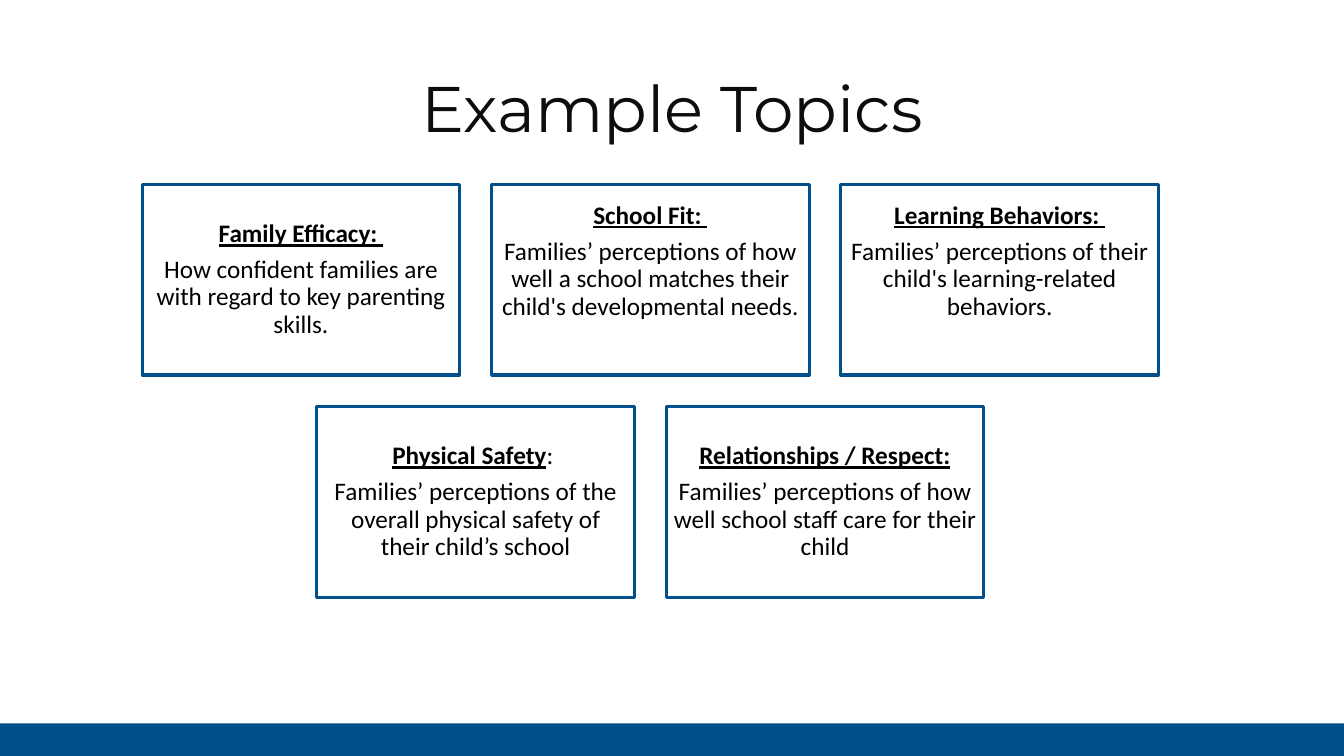
from dataclasses import dataclass

from pptx import Presentation
from pptx import util as u
from pptx.dml.color import RGBColor
from pptx.enum import shapes, text


@dataclass(frozen=True)
class Theme:
    accent: str = "00518B"
    paper: str = "FFFFFF"
    ink: str = "000000"
    title_ink: str = "0D0D0D"
    title_font: str = "Montserrat"
    body_font: str = "Calibri"
    title_size: float = 46
    body_size: float = 18
    border: float = 2.25
    paragraph_gap: float = 6.3
    inset: float = 0.07


class TopicSlide:
    """Draws a title, a centred grid of topic cards and a footer band."""

    left, top = 1.41, 1.83
    card_width, card_height = 3.15, 1.89
    gap = 0.1 * card_width
    columns = 3

    def __init__(self, deck, theme):
        self.theme = theme
        self.width, self.height = deck.slide_width, deck.slide_height
        self.slide = deck.slides.add_slide(deck.slide_layouts[5])

    def style_run(self, run, font, size, color, strong=False):
        run.font.name = font
        run.font.size = u.Pt(size)
        run.font.color.rgb = RGBColor.from_string(color)
        run.font.bold = run.font.underline = strong

    def title(self, wording):
        heading = self.slide.shapes.title
        heading.left, heading.top = u.Inches(1.57), u.Inches(0.62)
        heading.width, heading.height = u.Inches(10.19), u.Inches(0.88)
        heading.text_frame.text = wording
        heading.text_frame.auto_size = text.MSO_AUTO_SIZE.SHAPE_TO_FIT_TEXT
        line = heading.text_frame.paragraphs[0]
        line.alignment = text.PP_ALIGN.CENTER
        self.style_run(line.runs[0], self.theme.title_font,
                       self.theme.title_size, self.theme.title_ink)

    def rectangle(self, left, top, width, height, fill):
        panel = self.slide.shapes.add_shape(
            shapes.MSO_SHAPE.RECTANGLE, left, top, width, height)
        panel.shadow.inherit = False
        panel.fill.solid()
        panel.fill.fore_color.rgb = RGBColor.from_string(fill)
        panel.line.fill.background()
        return panel

    def card(self, column, row, name, plain_ending, description, lift):
        theme = self.theme
        panel = self.rectangle(
            u.Inches(self.left + column * (self.card_width + self.gap)),
            u.Inches(self.top + row * (self.card_height + self.gap)),
            u.Inches(self.card_width), u.Inches(self.card_height), theme.paper)
        panel.line.color.rgb = RGBColor.from_string(theme.accent)
        panel.line.width = u.Pt(theme.border)

        frame = panel.text_frame
        frame.word_wrap = True
        frame.vertical_anchor = text.MSO_ANCHOR.MIDDLE
        frame.margin_left = frame.margin_right = frame.margin_top = u.Inches(theme.inset)
        frame.margin_bottom = u.Inches(theme.inset + lift)
        frame.text = name
        label = frame.paragraphs[0]
        if plain_ending:
            label.add_run().text = plain_ending
        detail = frame.add_paragraph()
        detail.text = description
        for paragraph in (label, detail):
            paragraph.alignment = text.PP_ALIGN.CENTER
            paragraph.line_spacing = 0.9
            paragraph.space_after = u.Pt(theme.paragraph_gap)
            for run in paragraph.runs:
                self.style_run(run, theme.body_font, theme.body_size, theme.ink)
        label.runs[0].font.bold = label.runs[0].font.underline = True

    def cards(self, rows):
        for row, topics in enumerate(rows):
            first_column = (self.columns - len(topics)) / 2
            for position, topic in enumerate(topics):
                self.card(first_column + position, row, *topic)

    def footer(self, share):
        band = round(self.height * share)
        self.rectangle(0, self.height - band, self.width, band, self.theme.accent)


LIFT = 0.36
TOPIC_ROWS = [
    [
        ("Family Efficacy: ", "",
         "How confident families are with regard to key parenting skills.", 0),
        ("School Fit: ", "",
         "Families’ perceptions of how well a school matches their "
         "child's developmental needs.", LIFT),
        ("Learning Behaviors: ", "",
         "Families’ perceptions of their child's learning-related behaviors.", LIFT),
    ],
    [
        ("Physical Safety", ": ",
         "Families’ perceptions of the overall physical safety of "
         "their child’s school", 0),
        ("Relationships / Respect:", "",
         "Families’ perceptions of how well school staff care for their child", 0),
    ],
]


def main():
    deck = Presentation()
    deck.slide_width, deck.slide_height = u.Inches(13.33), u.Inches(7.5)
    topics = TopicSlide(deck, Theme())
    topics.title("Example Topics")
    topics.cards(TOPIC_ROWS)
    topics.footer(0.043)
    deck.save("out.pptx")


if __name__ == "__main__":
    main()
